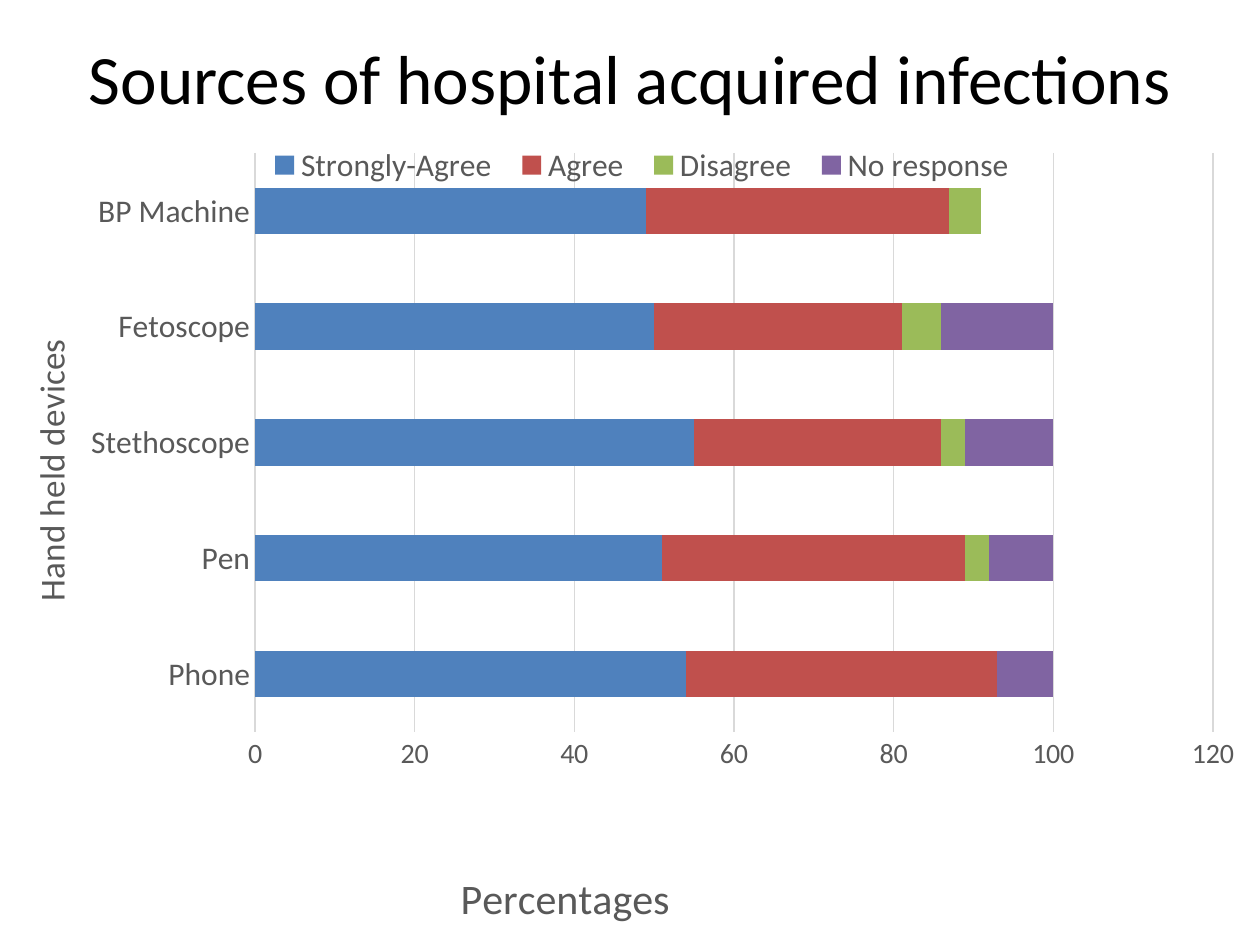
from dataclasses import dataclass

from lxml.etree import SubElement
from pptx import Presentation
from pptx.chart.data import CategoryChartData
from pptx.dml.color import RGBColor
from pptx.enum.chart import XL_CHART_TYPE as ChartType
from pptx.enum.chart import XL_LEGEND_POSITION as LegendPosition
from pptx.enum.chart import XL_TICK_MARK as TickMark
from pptx.enum.text import MSO_ANCHOR as Anchor
from pptx.enum.text import PP_ALIGN as Align
from pptx.oxml.ns import qn
from pptx.util import Emu, Pt


@dataclass(frozen=True)
class Theme:
    font: str = "Calibri"
    black: str = "000000"
    grey: str = "595959"
    rule: str = "D9D9D9"
    series: tuple = ("4F81BD", "C0504D", "9BBB59", "8064A2")
    title: float = 39.6
    value_title: int = 24
    category_title: int = 20
    label: int = 18
    value_label: int = 16
    base: int = 10


theme = Theme()
PX = 914400 // 126
CHART = (-21, 136, 1281, 809)


def write(frame, text, size, color, align=Align.CENTER):
    frame.text = text
    para = frame.paragraphs[0]
    para.alignment = align
    span = para.runs[0]
    span.font.name = theme.font
    span.font.size = Pt(size)
    span.font.bold = False
    span.font.color.rgb = RGBColor.from_string(color)


def place(part, index, left, top, size=(), inner=False):
    for old in part.findall(qn("c:layout")):
        part.remove(old)
    layout = SubElement(part, qn("c:layout"))
    part.insert(index, layout)
    manual = SubElement(layout, qn("c:manualLayout"))
    fields = [("layoutTarget", "inner")] if inner else []
    fields += [("xMode", "edge"), ("yMode", "edge")]
    fields += [("x", (left - CHART[0]) / CHART[2]), ("y", (top - CHART[1]) / CHART[3])]
    fields += [(name, length / full) for name, length, full in zip("wh", size, CHART[2:])]
    for name, value in fields:
        SubElement(manual, qn(f"c:{name}")).set("val", str(value))


deck = Presentation()
deck.slide_width, deck.slide_height = Emu(1260 * PX), Emu(945 * PX)
page = deck.slides.add_slide(deck.slide_layouts[5])

title = page.shapes.title
title.left, title.top, title.width, title.height = (
    Emu(n * PX) for n in (63, 38, 1134, 78)
)
title.text_frame.vertical_anchor = Anchor.MIDDLE
write(title.text_frame, "Sources of hospital acquired infections", theme.title, theme.black)

answers = {
    "Strongly-Agree": (54, 51, 55, 50, 49),
    "Agree": (39, 38, 31, 31, 38),
    "Disagree": (0, 3, 3, 5, 4),
    "No response": (7, 8, 11, 14, None),
}
data = CategoryChartData()
data.categories = ["Phone", "Pen", "Stethoscope", "Fetoscope", "BP Machine"]
for name, values in answers.items():
    data.add_series(name, values)

chart = page.shapes.add_chart(
    ChartType.BAR_STACKED, *(Emu(n * PX) for n in CHART), data
).chart
chart.has_title = False
chart.font.name = theme.font
chart.font.size = Pt(theme.base)
chart.font.color.rgb = RGBColor.from_string(theme.black)

plot = chart.plots[0]
plot.gap_width = 150
plot.overlap = 100
plot.vary_by_categories = False
for series, color in zip(plot.series, theme.series):
    series.invert_if_negative = False
    series.format.fill.solid()
    series.format.fill.fore_color.rgb = RGBColor.from_string(color)

chart.has_legend = True
chart.legend.position = LegendPosition.BOTTOM
chart.legend.include_in_layout = True

devices, percent = chart.category_axis, chart.value_axis
percent.minimum_scale, percent.maximum_scale, percent.major_unit = 0, 120, 20
percent.has_major_gridlines = True
percent.format.line.fill.background()
for line in (devices.format.line, percent.major_gridlines.format.line):
    line.color.rgb = RGBColor.from_string(theme.rule)
    line.width = Pt(0.75)

for font, size in (
    (devices.tick_labels.font, theme.label),
    (percent.tick_labels.font, theme.value_label),
    (chart.legend.font, theme.label),
):
    font.name = theme.font
    font.size = Pt(size)
    font.color.rgb = RGBColor.from_string(theme.grey)

for axis, text, size, turn, left, top in (
    (devices, "Hand held devices", theme.category_title, -5400000, 20, 333),
    (percent, "Percentages", theme.value_title, 0, 453, 863),
):
    axis.major_tick_mark = axis.minor_tick_mark = TickMark.NONE
    axis.has_title = True
    write(axis.axis_title.text_frame, text, size, theme.grey)
    heading = axis.axis_title.element
    body = heading.find(".//" + qn("a:bodyPr"))
    body.set("rot", str(turn))
    body.set("vert", "horz")
    place(heading, 1, left, top)

place(chart.element.xpath("c:chart/c:plotArea")[0], 0, 255, 153, (958, 579), inner=True)
place(chart.element.xpath("c:chart/c:legend")[0], 1, 255, 146, (774, 38))

deck.save("out.pptx")
